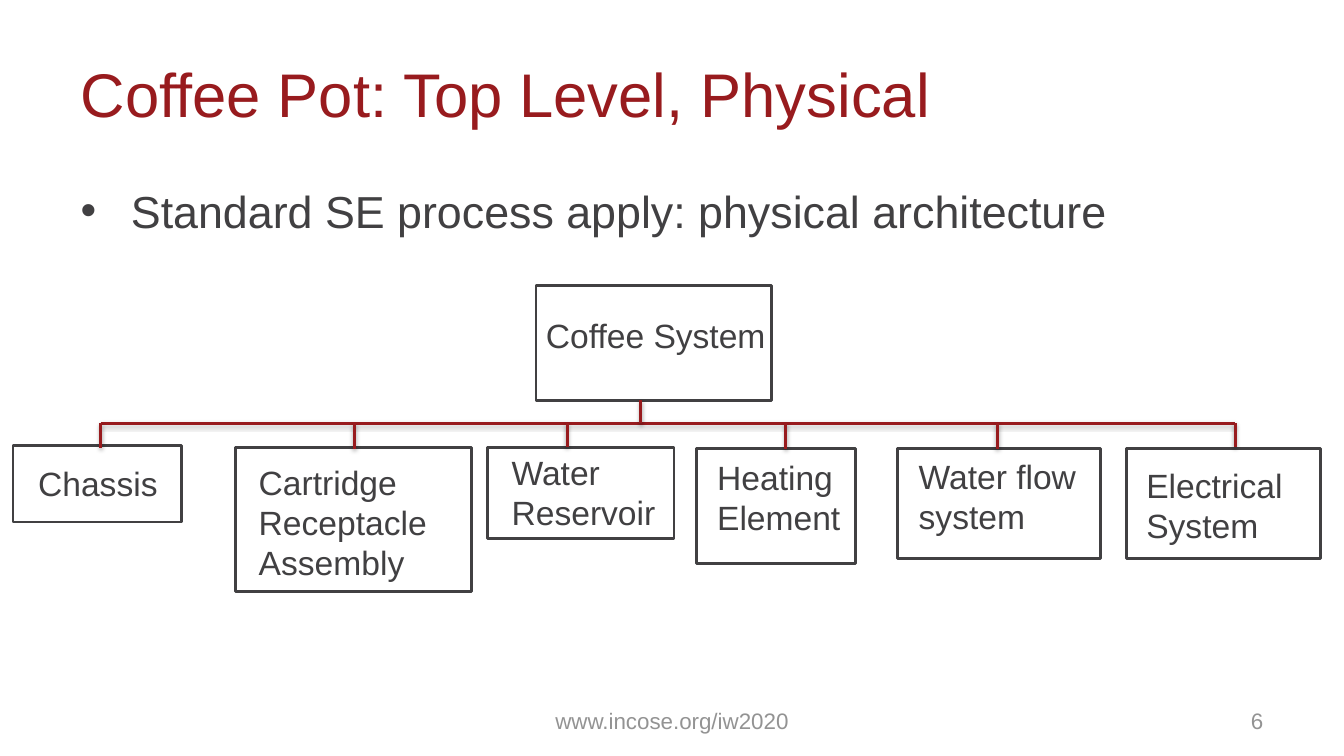
"""Build the coffee pot physical architecture slide."""
from pptx import Presentation
from pptx.dml.color import RGBColor
from pptx.enum.shapes import MSO_CONNECTOR as Connector, MSO_SHAPE as Shape
from pptx.enum.text import MSO_ANCHOR as Anchor, PP_ALIGN as Align
from pptx.oxml import parse_xml
from pptx.oxml.ns import nsdecls
from pptx.util import Inches, Pt

RED = RGBColor(0x98, 0x1B, 0x1E)
DARK = RGBColor(0x41, 0x40, 0x42)
GRAY = RGBColor(0x93, 0x93, 0x93)

TITLE = "Coffee Pot: Top Level, Physical"
BULLET = "Standard SE process apply: physical architecture"
ADDRESS = "www.incose.org/iw2020"
PAGE_NUMBER = "6"

# Each part: label, frame (left, top, width, height), label area.
PARTS = [
    ("Coffee System", (5.32, 2.83, 2.34, 1.14), (5.32, 3.08, 2.57, 0.5)),
    ("Chassis", (0.13, 4.42, 1.67, 0.76), (0.28, 4.54, 1.48, 0.5)),
    ("Cartridge Receptacle Assembly", (2.34, 4.44, 2.34, 1.43), (2.47, 4.53, 2.2, 1.31)),
    ("Water Reservoir", (4.84, 4.44, 1.85, 0.9), (4.98, 4.43, 1.67, 0.91)),
    ("Heating Element", (6.91, 4.45, 1.58, 1.14), (7.02, 4.48, 1.47, 0.91)),
    ("Water flow system", (8.91, 4.45, 2.01, 1.09), (9.02, 4.47, 1.88, 0.91)),
    ("Electrical System", (11.18, 4.45, 1.93, 1.09), (11.28, 4.56, 1.77, 0.91)),
]
BUS_TOP = 4.2
TRUNK = (6.36, 3.97)
BRANCHES = [(1, 4.44), (3.52, 4.45), (5.63, 4.43), (7.8, 4.45), (9.9, 4.45), (12.26, 4.43)]

SHADOW = (
    f'<a:effectLst {nsdecls("a")}><a:outerShdw blurRad="{Pt(3.1)}" dist="{Pt(1.6)}" '
    'dir="5400000" rotWithShape="0"><a:srgbClr val="000000"><a:alpha val="38000"/>'
    '</a:srgbClr></a:outerShdw></a:effectLst>'
)


def add_text(page, text, area, size=24, color=DARK, align=Align.LEFT,
             anchor=Anchor.TOP, inset=(0.1, 0.05), bullet=False):
    box = page.shapes.add_textbox(*map(Inches, area))
    frame = box.text_frame
    frame.word_wrap = True
    frame.vertical_anchor = anchor
    frame.margin_left = frame.margin_right = Inches(inset[0])
    frame.margin_top = frame.margin_bottom = Inches(inset[1])
    para = frame.paragraphs[0]
    para.alignment = align
    if bullet:
        properties = para._p.get_or_add_pPr()
        properties.set("marL", str(Inches(0.5)))
        properties.set("indent", str(-Inches(0.5)))
        properties.append(parse_xml(f'<a:buFont {nsdecls("a")} typeface="Arial"/>'))
        properties.append(parse_xml(f'<a:buChar {nsdecls("a")} char="•"/>'))
    span = para.add_run()
    span.text = text
    span.font.name = "Arial"
    span.font.size = Pt(size)
    span.font.color.rgb = color


def add_frame(page, area):
    shape = page.shapes.add_shape(Shape.RECTANGLE, *map(Inches, area))
    shape.shadow.inherit = False
    shape.fill.background()
    shape.line.color.rgb = DARK
    shape.line.width = Pt(2)


def add_line(page, start, end):
    line = page.shapes.add_connector(Connector.STRAIGHT, *map(Inches, start + end))
    line.line.color.rgb = RED
    line.line.width = Pt(2)
    line._element.spPr.append(parse_xml(SHADOW))


def main():
    deck = Presentation()
    deck.slide_width, deck.slide_height = Inches(13.34), Inches(7.5)
    page = deck.slides.add_slide(deck.slide_layouts[6])

    wide = {"inset": (0.13, 0.07)}
    footer = {"size": 16, "color": GRAY, "anchor": Anchor.MIDDLE, **wide}
    add_text(page, TITLE, (0.67, 0.3, 12.01, 1.25), size=44, color=RED,
             anchor=Anchor.MIDDLE, **wide)
    add_text(page, BULLET, (0.67, 1.75, 12.01, 1.11), size=32, bullet=True, **wide)
    add_text(page, ADDRESS, (4.56, 6.95, 4.22, 0.4), align=Align.CENTER, **footer)
    add_text(page, PAGE_NUMBER, (9.56, 6.95, 3.11, 0.4), align=Align.RIGHT, **footer)

    for label, frame_area, label_area in PARTS:
        add_frame(page, frame_area)
        add_text(page, label, label_area)

    add_line(page, (BRANCHES[0][0], BUS_TOP), (BRANCHES[-1][0], BUS_TOP))
    add_line(page, TRUNK, (TRUNK[0], BUS_TOP))
    for left, bottom in BRANCHES:
        add_line(page, (left, BUS_TOP), (left, bottom))

    deck.save("out.pptx")


if __name__ == "__main__":
    main()
